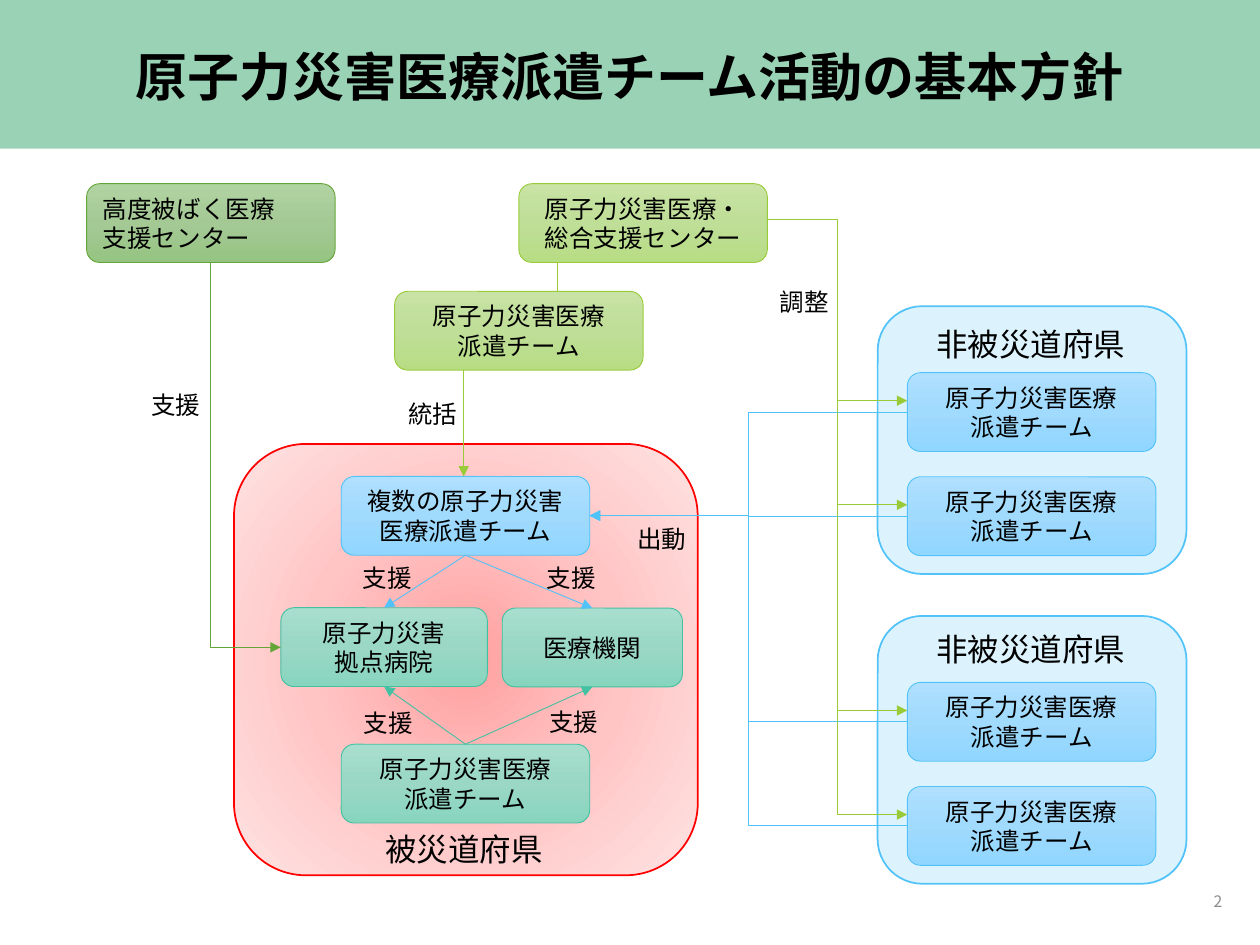
from dataclasses import dataclass
from lxml.etree import SubElement
from pptx import Presentation
from pptx.dml.color import RGBColor
from pptx.enum.shapes import MSO_CONNECTOR, MSO_SHAPE
from pptx.enum.text import MSO_ANCHOR, MSO_AUTO_SIZE, PP_ALIGN
from pptx.oxml import parse_xml
from pptx.oxml.ns import nsdecls, qn
from pptx.util import Pt


@dataclass(frozen=True)
class Theme:
    font: str = "Noto Sans CJK JP"
    ink: str = "000000"
    muted: str = "8C8C8C"
    band: str = "37A76F"
    title_size: float = 29.7
    region_size: float = 18
    body_size: float = 14
    number_size: float = 9
    thin: float = 0.5
    outline: float = 1


THEME = Theme()
LINES = {"lime": "99CB38", "teal": "44C1A3", "green": "63A537", "blue": "51C3F9", "red": "FF0000"}
GRADIENTS = {
    "lime": ("C8E3A5", "BFDE97", "B7DD84"),
    "teal": ("A8DECD", "9AD7C5", "88D5BE"),
    "green": ("B0D3A2", "A4C995", "95C482"),
    "blue": ("B0E0FE", "A0DAFD", "90D6FF"),
    "red": ("FFA0A0", "FFC5C5", "FFE3E3"),
}
PREFECTURE_FILL = "DCF3FE"

TITLE = "原子力災害医療派遣チーム活動の基本方針"
TEAM = ("原子力災害医療", "派遣チーム")
TEAM_W, BOX_H = 142, 45
BOXES = [
    (("原子力災害医療・総合支援センター",), "lime", 296.5, 105, TEAM_W, PP_ALIGN.CENTER),
    (TEAM, "lime", 225.5, 166.5, TEAM_W, PP_ALIGN.CENTER),
    (("高度被ばく医療", "支援センター"), "green", 49.5, 105, TEAM_W, PP_ALIGN.LEFT),
    (("複数の原子力災害医療派遣チーム",), "blue", 195, 272.3, TEAM_W, PP_ALIGN.CENTER),
    (("原子力災害", "拠点病院"), "teal", 160.5, 347.3, 118, PP_ALIGN.CENTER),
    (("医療機関",), "teal", 287, 347.5, 103, PP_ALIGN.CENTER),
    (TEAM, "teal", 195, 425.3, TEAM_W, PP_ALIGN.CENTER),
]
PREFECTURES = [("非被災道府県", 175, 182), ("非被災道府県", 352, 356.5)]
PREFECTURE_X, PREFECTURE_W, PREFECTURE_H = 501.5, 176.5, 153
TEAM_X, TEAM_OFFSETS = 518.5, (38, 97.5)
COORDINATION_DROP, DISPATCH_DROP = 16, 22.5
CENTER_EXIT, DISPATCH_TARGET = (438.5, 125.3), (337, 294.7)

STRAIGHT_LINKS = [
    ("lime", (318.5, 150), (318.5, 166.5), False),
    ("lime", (265, 211.5), (265, 272.3), True),
    ("blue", (266, 317.3), (219.5, 347.3), True),
    ("blue", (266, 317.3), (338.5, 347.5), True),
    ("teal", (266, 425.3), (219.5, 392.3), True),
    ("teal", (266, 425.3), (338.5, 392.5), True),
]
LABELS = [
    ("支援", 79.2, 219.6), ("統括", 226.1, 224.6), ("調整", 438.5, 160.6), ("出動", 357.1, 295.9),
    ("支援", 200.2, 318.2), ("支援", 305.3, 318.2), ("支援", 200.9, 401), ("支援", 306.7, 400.3),
]

presentation = Presentation()
presentation.slide_width, presentation.slide_height = Pt(720), Pt(540)
slide = presentation.slides.add_slide(presentation.slide_layouts[6])


def write(frame, lines, size, align=PP_ALIGN.LEFT, color=THEME.ink, bold=False):
    for index, line in enumerate(lines):
        paragraph = frame.add_paragraph() if index else frame.paragraphs[0]
        paragraph.text = line
        paragraph.alignment = align
        font = paragraph.font
        font.size, font.bold, font.name = Pt(size), bold, THEME.font
        font.color.rgb = RGBColor.from_string(color)
        SubElement(font._rPr, qn("a:ea")).set("typeface", THEME.font)


def add_panel(kind, x, y, w, h, fill, line=None, width=THEME.thin):
    panel = slide.shapes.add_shape(kind, Pt(x), Pt(y), Pt(w), Pt(h))
    panel.shadow.inherit = False
    panel.fill.solid()
    panel.fill.fore_color.rgb = RGBColor.from_string(fill)
    if line:
        panel.line.color.rgb = RGBColor.from_string(line)
        panel.line.width = Pt(width)
    else:
        panel.line.fill.background()
    return panel


def add_gradient(panel, colors, direction):
    stops = "".join(
        f'<a:gs pos="{index * 50000}"><a:srgbClr val="{color}"/></a:gs>'
        for index, color in enumerate(colors)
    )
    gradient = parse_xml(
        f'<a:gradFill {nsdecls("a")} rotWithShape="1"><a:gsLst>{stops}</a:gsLst>{direction}</a:gradFill>'
    )
    properties = panel._element.spPr
    properties.replace(properties.find(qn("a:solidFill")), gradient)


def add_box(lines, hue, x, y, w=TEAM_W, align=PP_ALIGN.CENTER):
    box = add_panel(MSO_SHAPE.ROUNDED_RECTANGLE, x, y, w, BOX_H, GRADIENTS[hue][1], LINES[hue])
    add_gradient(box, GRADIENTS[hue], '<a:lin ang="5400000" scaled="0"/>')
    box.text_frame.vertical_anchor = MSO_ANCHOR.MIDDLE
    write(box.text_frame, lines, THEME.body_size, align)


def add_text(text, x, y, w, h, size, **style):
    frame = slide.shapes.add_textbox(Pt(x), Pt(y), Pt(w), Pt(h)).text_frame
    write(frame, [text], size, **style)
    return frame


def add_label(text, x, y, w, h, size):
    frame = add_text(text, x, y, w, h, size)
    frame.word_wrap = False
    frame.auto_size = MSO_AUTO_SIZE.SHAPE_TO_FIT_TEXT


def add_link(hue, start, end, kind=MSO_CONNECTOR.STRAIGHT, arrow=True):
    link = slide.shapes.add_connector(kind, *map(Pt, (*start, *end)))
    link.line.color.rgb = RGBColor.from_string(LINES[hue])
    link.line.width = Pt(THEME.thin)
    properties = link._element.spPr
    if arrow:
        SubElement(properties.find(qn("a:ln")), qn("a:tailEnd")).set("type", "triangle")
    SubElement(properties, qn("a:effectLst"))
    return link


band = add_panel(MSO_SHAPE.RECTANGLE, 0, 0, 720, 85, THEME.band)
band_color = band._element.spPr.find(qn("a:solidFill"))[0]
SubElement(band_color, qn("a:alpha")).set("val", "50000")
heading = add_text(TITLE, 49.5, 15, 621, 61, THEME.title_size, align=PP_ALIGN.CENTER, bold=True)
heading.word_wrap = True
heading.vertical_anchor = MSO_ANCHOR.MIDDLE
heading.paragraphs[0].line_spacing = 0.9

disaster_area = add_panel(MSO_SHAPE.ROUNDED_RECTANGLE, 133.7, 253.7, 265, 246.5,
                          GRADIENTS["red"][1], LINES["red"], THEME.outline)
add_gradient(disaster_area, GRADIENTS["red"],
             '<a:path path="circle"><a:fillToRect l="50000" t="50000" r="50000" b="50000"/></a:path>')
add_label("被災道府県", 213, 471, 105, 29, THEME.region_size)

for name, top, name_top in PREFECTURES:
    add_panel(MSO_SHAPE.ROUNDED_RECTANGLE, PREFECTURE_X, top, PREFECTURE_W, PREFECTURE_H,
              PREFECTURE_FILL, LINES["blue"], THEME.outline)
    add_label(name, 527.8, name_top, 124, 29, THEME.region_size)

team_tops = [top + offset for _, top, _ in PREFECTURES for offset in TEAM_OFFSETS]
for top in team_tops:
    add_box(TEAM, "blue", TEAM_X, top)
for box in BOXES:
    add_box(*box)

for top in team_tops:
    add_link("blue", (TEAM_X, top + DISPATCH_DROP), DISPATCH_TARGET, MSO_CONNECTOR.ELBOW)
for top in team_tops:
    add_link("lime", CENTER_EXIT, (TEAM_X, top + COORDINATION_DROP), MSO_CONNECTOR.ELBOW)
for hue, start, end, arrow in STRAIGHT_LINKS:
    add_link(hue, start, end, arrow=arrow)

support_link = add_link("green", (250.4, 239.8), (30.4, 280), MSO_CONNECTOR.ELBOW)
support_geometry = support_link._element.spPr
support_geometry.find(qn("a:xfrm")).set("rot", "16200000")
support_geometry.find(qn("a:prstGeom")).set("prst", "bentConnector2")

for text, x, y in LABELS:
    add_label(text, x, y, 42.5, 24.5, THEME.body_size)

page_number = add_text("2", 543.6, 500.4, 162, 28.8, THEME.number_size,
                       align=PP_ALIGN.RIGHT, color=THEME.muted)
page_number.word_wrap = True
page_number.vertical_anchor = MSO_ANCHOR.MIDDLE

presentation.save("out.pptx")
